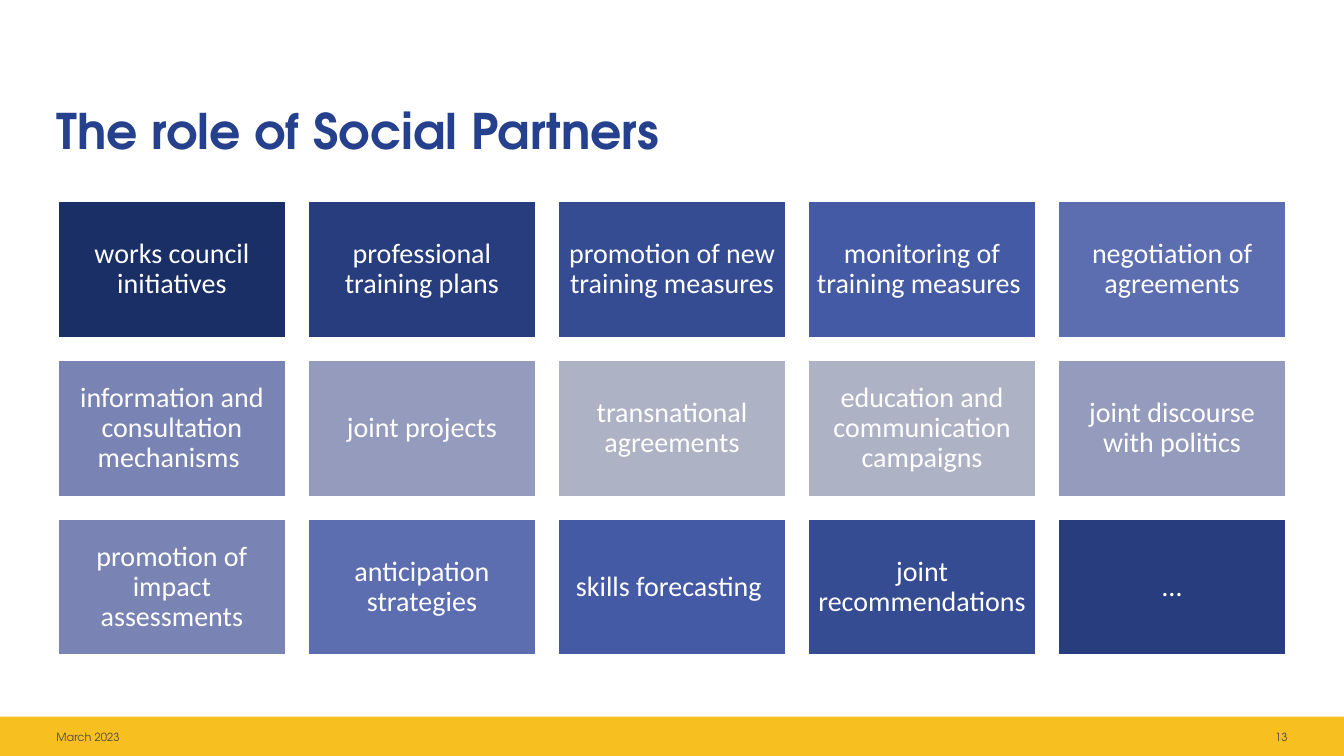
from pptx import Presentation
from pptx import util as u
from pptx.dml.color import RGBColor
from pptx.enum import shapes, text

HEADING_FONT = "TeX Gyre Adventor"
SHADES = ["1B2F67", "273D7D", "354B92", "455AA4", "5C6DB0", "7984B5", "959BBC", "AEB2C5"]
ROLES = [
    "works council initiatives",
    "professional training plans",
    "promotion of new training measures",
    "monitoring of training measures ",
    "negotiation of agreements",
    "information and consultation mechanisms ",
    "joint projects",
    "transnational agreements",
    "education and communication campaigns",
    "joint discourse with politics",
    "promotion of impact assessments",
    "anticipation strategies",
    "skills forecasting ",
    "joint recommendations",
    "…",
]


def color(hex_value):
    return RGBColor.from_string(hex_value)


def place(shape, left, top, width, height):
    for name, value in zip(("left", "top", "width", "height"), (left, top, width, height)):
        setattr(shape, name, u.Inches(value))


def write(shape, words, font, size, hex_value, align=text.PP_ALIGN.LEFT,
          anchor=text.MSO_ANCHOR.MIDDLE, inset=0, spacing=1.0, bold=False):
    frame = shape.text_frame
    frame.word_wrap = True
    frame.auto_size = text.MSO_AUTO_SIZE.NONE
    frame.vertical_anchor = anchor
    for side in ("left", "top", "right", "bottom"):
        setattr(frame, f"margin_{side}", u.Inches(inset))
    paragraph = frame.paragraphs[0]
    paragraph.text = words
    paragraph.alignment = align
    paragraph.line_spacing = spacing
    for name, value in {"name": font, "size": u.Pt(size), "bold": bold}.items():
        setattr(paragraph.font, name, value)
    paragraph.font.color.rgb = color(hex_value)


def add_rectangle(slide, box, fill, line=None):
    shape = slide.shapes.add_shape(shapes.MSO_SHAPE.RECTANGLE, *map(u.Inches, box))
    shape.shadow.inherit = False
    shape.fill.solid()
    shape.fill.fore_color.rgb = color(fill)
    if line:
        shape.line.color.rgb = color(line)
        shape.line.width = u.Pt(1)
    else:
        shape.line.fill.background()
    return shape


def add_title(slide, left, top, width, height):
    title = slide.shapes.title
    place(title, left, top, width, height)
    write(title, "The role of Social Partners", HEADING_FONT, 35, "25408C",
          anchor=text.MSO_ANCHOR.TOP, spacing=0.9, bold=True)


def add_role_grid(slide, left, top, width, height, columns=5, gap=0.23):
    """Tile the roles row by row; shades run from dark to light and back."""
    rows = len(ROLES) // columns
    tile_width = (width - gap * (columns - 1)) / columns
    tile_height = (height - gap * (rows - 1)) / rows
    fills = SHADES + SHADES[:0:-1]
    for index, (role, fill) in enumerate(zip(ROLES, fills)):
        row, column = divmod(index, columns)
        box = (left + column * (tile_width + gap), top + row * (tile_height + gap),
               tile_width, tile_height)
        tile = add_rectangle(slide, box, fill, "FFFFFF")
        write(tile, role, "Calibri", 20, "FFFFFF", text.PP_ALIGN.CENTER,
              inset=0.08, spacing=0.9)


def add_footer(slide, left, top, width, height):
    add_rectangle(slide, (left, top, width, height), "F8BF21")
    label_width, margin = 1.97, 0.56
    labels = [
        ("March 2023", left + margin, text.PP_ALIGN.LEFT),
        ("13", left + width - margin - label_width, text.PP_ALIGN.RIGHT),
    ]
    for words, label_left, align in labels:
        box = (label_left, top + 0.09, label_width, 0.23)
        label = slide.shapes.add_textbox(*map(u.Inches, box))
        write(label, words, HEADING_FONT, 8, "4A4949", align)


def main():
    presentation = Presentation()
    presentation.slide_width = u.Inches(13.33)
    presentation.slide_height = u.Inches(7.5)
    slide = presentation.slides.add_slide(presentation.slide_layouts[5])
    add_footer(slide, 0, 7.11, 13.33, 0.39)
    add_role_grid(slide, 0.58, 2, 12.17, 4.5)
    add_title(slide, 0.56, 1.06, 12.2, 0.79)
    presentation.save("out.pptx")


if __name__ == "__main__":
    main()
